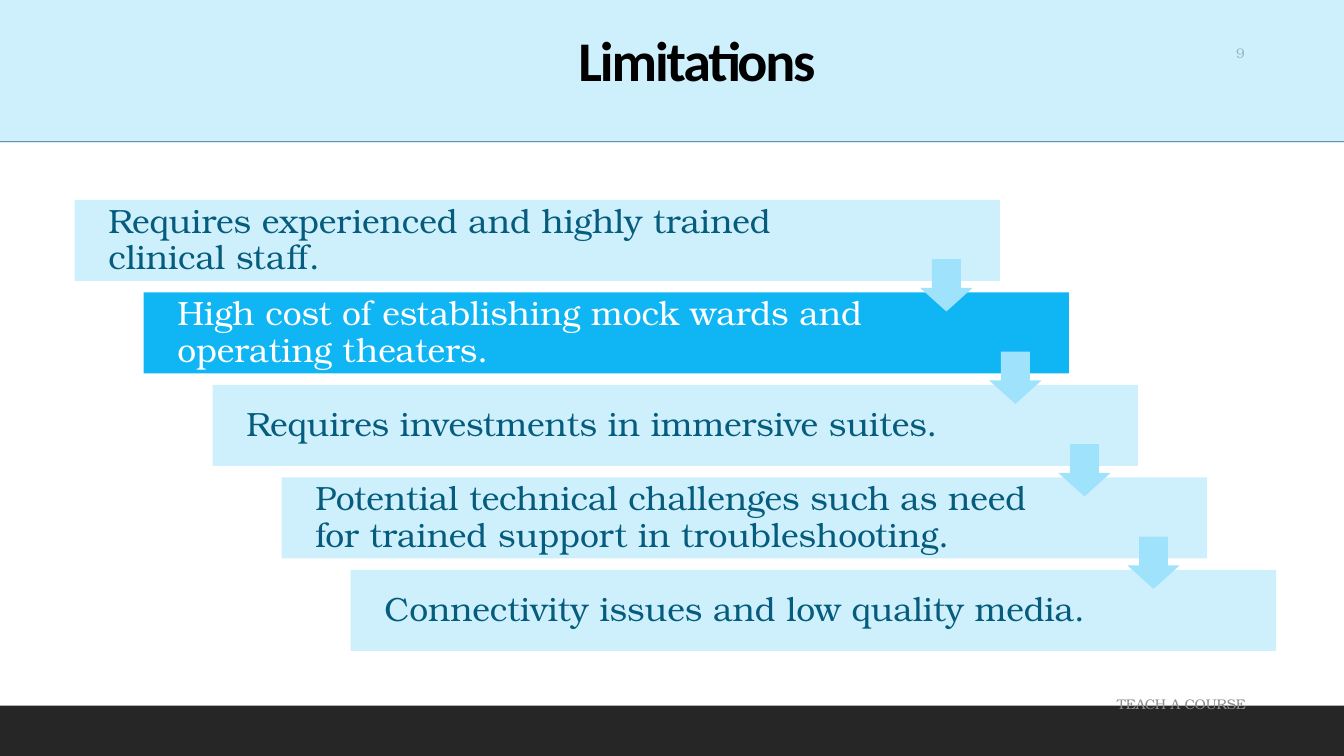
"""Build the Limitations slide: five cascading panels joined by arrows."""
import pptx
import pptx.util
import pptx.dml.color
import pptx.enum.shapes
import pptx.enum.text
import pptx.oxml.ns
from lxml import etree

Cm = pptx.util.Cm
RGBColor = pptx.dml.color.RGBColor
SHAPES = pptx.enum.shapes.MSO_SHAPE
ALIGN = pptx.enum.text.PP_ALIGN

PALE_BLUE = RGBColor(0x9F, 0xE2, 0xFB)
BRIGHT_BLUE = RGBColor(0x10, 0xB6, 0xF4)
DEEP_BLUE = RGBColor(0x06, 0x5C, 0x7C)
CHARCOAL = RGBColor(0x26, 0x26, 0x26)
RULE_GRAY = RGBColor(0x40, 0x40, 0x40)
NOTE_GRAY = RGBColor(0x8C, 0x8C, 0x8C)
BLACK = RGBColor(0, 0, 0)
WHITE = RGBColor(255, 255, 255)
SERIF = "TeX Gyre Bonum"
SLIDE_WIDTH = 33.87
STEP_X, STEP_Y = 1.74, 2.33

presentation = pptx.Presentation()
presentation.slide_width = Cm(SLIDE_WIDTH)
presentation.slide_height = Cm(19.05)
slide = presentation.slides.add_slide(presentation.slide_layouts[6])


def add_block(kind, left, top, width, height, color, opacity=100):
    shape = slide.shapes.add_shape(kind, Cm(left), Cm(top), Cm(width), Cm(height))
    shape.shadow.inherit = False
    shape.line.fill.background()
    shape.fill.solid()
    shape.fill.fore_color.rgb = color
    if opacity < 100:
        color_node = shape.fill._xPr.find(".//" + pptx.oxml.ns.qn("a:srgbClr"))
        etree.SubElement(color_node, pptx.oxml.ns.qn("a:alpha"), val=str(opacity * 1000))
    return shape


def write(shape, text, size, font, color, align, insets, spacing=1.0):
    frame = shape.text_frame
    frame.word_wrap = True
    frame.vertical_anchor = pptx.enum.text.MSO_ANCHOR.MIDDLE
    frame.margin_left, frame.margin_top, frame.margin_right, frame.margin_bottom = map(Cm, insets)
    frame.text = text
    paragraph = frame.paragraphs[0]
    paragraph.alignment = align
    paragraph.line_spacing = spacing
    run = paragraph.runs[0]
    run.font.size = pptx.util.Pt(size)
    run.font.name = font
    run.font.color.rgb = color
    return run


add_block(SHAPES.RECTANGLE, 0, 17.78, SLIDE_WIDTH, 1.27, CHARCOAL)

rule = slide.shapes.add_connector(
    pptx.enum.shapes.MSO_CONNECTOR.STRAIGHT, 0, Cm(3.56), Cm(SLIDE_WIDTH), Cm(3.56))
rule.line.color.rgb = RULE_GRAY
rule.line.width = pptx.util.Pt(1)
etree.SubElement(rule._element.spPr, pptx.oxml.ns.qn("a:effectLst"))

for text, left, top, width in [("TEACH A COURSE", 2.24, 17.3, 29.41), ("9", 29.08, 0.89, 2.54)]:
    note = slide.shapes.add_textbox(Cm(left), Cm(top), Cm(width), Cm(0.89))
    write(note, text, 10, SERIF, NOTE_GRAY, ALIGN.RIGHT, (0.25, 0.13, 0.25, 0.13))

title = add_block(SHAPES.RECTANGLE, 0, 0, SLIDE_WIDTH, 3.6, PALE_BLUE, 50)
title_run = write(title, "Limitations", 40, "Calibri", BLACK, ALIGN.CENTER,
                  (1.9, 0.3, 0.64, 0.64), 0.85)
title_run.font.bold = True
title_run.font._element.set("spc", "-150")

limitations = [
    ("Requires experienced and highly trained clinical staff.", 20.88, PALE_BLUE, 50, DEEP_BLUE),
    ("High cost of establishing mock wards and operating theaters.", 20.14, BRIGHT_BLUE, 100, WHITE),
    ("Requires investments in immersive suites.", 20.14, PALE_BLUE, 50, DEEP_BLUE),
    ("Potential technical challenges such as need for trained support in troubleshooting.",
     20.14, PALE_BLUE, 50, DEEP_BLUE),
    ("Connectivity issues and low quality media.", 20.14, PALE_BLUE, 50, DEEP_BLUE),
]
for index, (text, text_width, fill, opacity, text_color) in enumerate(limitations):
    left, top = 1.88 + index * STEP_X, 5.04 + index * STEP_Y
    add_block(SHAPES.RECTANGLE, left, top, 23.32, 2.04, fill, opacity)
    label = slide.shapes.add_textbox(Cm(left + 0.06), Cm(top + 0.06), Cm(text_width), Cm(1.93))
    write(label, text, 24, SERIF, text_color, ALIGN.LEFT, (0.79, 0.25, 0.25, 0.25), 0.9)

for index in range(len(limitations) - 1):
    arrow = add_block(SHAPES.DOWN_ARROW, 23.19 + index * STEP_X, 6.53 + index * STEP_Y,
                      1.32, 1.32, PALE_BLUE)
    arrow.adjustments[0] = 0.55
    arrow.adjustments[1] = 0.45

presentation.save("out.pptx")
